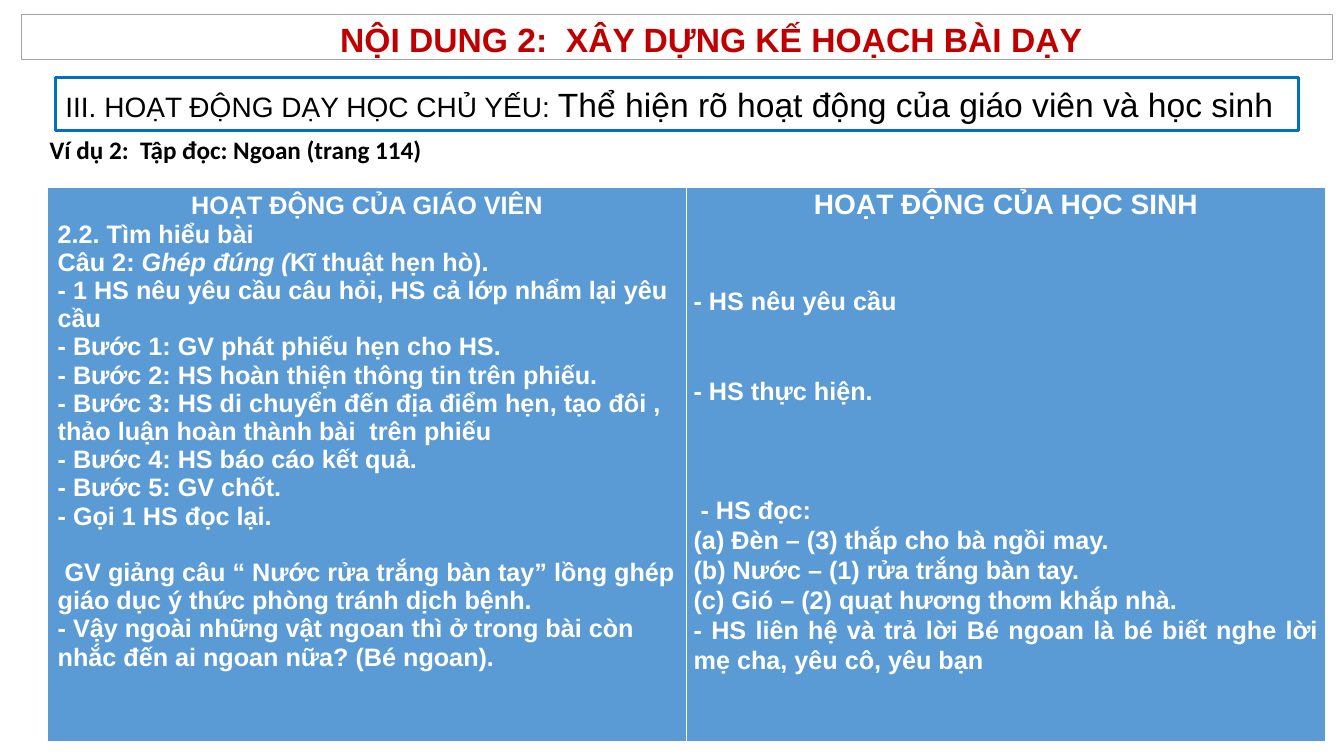
import pptx
import pptx.util
import pptx.dml.color
import pptx.enum.shapes
import pptx.enum.text

Cm, Pt = pptx.util.Cm, pptx.util.Pt
ALIGN = pptx.enum.text.PP_ALIGN
ANCHOR = pptx.enum.text.MSO_ANCHOR
COLORS = {"white": "FFFFFF", "black": "000000", "red": "C00000",
          "grey": "A5A5A5", "frame": "0070C0", "table": "5B9BD5"}
WORD_SPACE = Pt(5)

TEACHER_STEPS = [
    "2.2. Tìm hiểu bài",
    [("Câu 2: ", False), ("Ghép đúng (", True), ("Kĩ thuật hẹn hò).", False)],
    "- 1 HS nêu yêu cầu câu hỏi, HS cả lớp nhẩm lại yêu cầu",
    "- Bước 1: GV phát phiếu hẹn cho HS.",
    "- Bước 2: HS hoàn thiện thông tin trên phiếu.",
    "- Bước 3: HS di chuyển đến địa điểm hẹn, tạo đôi , thảo luận hoàn thành bài  trên phiếu",
    "- Bước 4: HS báo cáo kết quả.",
    "- Bước 5: GV chốt.",
    "- Gọi 1 HS đọc lại.",
    "GV giảng câu “ Nước rửa trắng bàn tay” lồng ghép giáo dục ý thức phòng tránh dịch bệnh.",
    "- Vậy ngoài những vật ngoan thì ở trong bài còn nhắc đến ai ngoan nữa? (Bé ngoan).",
]
STUDENT_STEPS = [
    "- HS nêu yêu cầu",
    "- HS thực hiện.",
    "- HS đọc:",
    "(a) Đèn – (3) thắp cho bà ngồi may.",
    "(b) Nước – (1) rửa trắng bàn tay.",
    "(c) Gió – (2) quạt hương thơm khắp nhà.",
    "- HS liên hệ và trả lời Bé ngoan là bé biết nghe lời mẹ cha, yêu cô, yêu bạn",
]
# Space in points before a step, by its position in the column
TEACHER_GAPS = {9: 20}
STUDENT_GAPS = {0: 47, 1: 43, 2: 64}


def rgb(name):
    return pptx.dml.color.RGBColor.from_string(COLORS[name])


def place(shape, box):
    shape.left, shape.top, shape.width, shape.height = (Cm(length) for length in box)


def set_font(font, size, color, name="Arial", bold=None):
    font.name, font.size, font.bold = name, Pt(size), bold
    font.color.rgb = rgb(color)


def set_indent(paragraph, first_line, left=0):
    properties = paragraph._p.get_or_add_pPr()
    properties.set("marL", str(left))
    properties.set("indent", str(first_line))


def frame_shape(shape, line_color, line_width):
    shape.fill.solid()
    shape.fill.fore_color.rgb = rgb("white")
    shape.line.color.rgb = rgb(line_color)
    shape.line.width = Pt(line_width)


def add_title(slide, box):
    title = slide.shapes.title
    place(title, box)
    frame_shape(title, "grey", 0.5)
    frame = title.text_frame
    frame.auto_size = pptx.enum.text.MSO_AUTO_SIZE.NONE
    frame.vertical_anchor = ANCHOR.TOP
    frame.text = "NỘI DUNG 2:  XÂY DỰNG KẾ HOẠCH BÀI DẠY"
    paragraph = frame.paragraphs[0]
    paragraph.alignment = ALIGN.CENTER
    set_indent(paragraph, Cm(1.27), Cm(0.46))
    set_font(paragraph.font, 24, "red", bold=True)


def add_section_heading(slide, box):
    shape = slide.shapes.add_shape(pptx.enum.shapes.MSO_SHAPE.RECTANGLE,
                                   *(Cm(length) for length in box))
    shape.shadow.inherit = False
    frame_shape(shape, "frame", 2.25)
    shape.text_frame.vertical_anchor = ANCHOR.MIDDLE
    paragraph = shape.text_frame.paragraphs[0]
    paragraph.alignment = ALIGN.JUSTIFY
    for text, size in (("III. HOẠT ĐỘNG DẠY HỌC CHỦ YẾU: ", 20),
                       ("Thể hiện rõ hoạt động của giáo viên và học sinh", 24)):
        run = paragraph.add_run()
        run.text = text
        set_font(run.font, size, "black")


def add_example_label(slide, box):
    label = slide.shapes.add_textbox(*(Cm(length) for length in box))
    label.text_frame.word_wrap = True
    label.text_frame.text = "Ví dụ 2:  Tập đọc: Ngoan (trang 114)"
    set_font(label.text_frame.paragraphs[0].font, 18, "black", "Calibri", True)


def fill_column(cell, heading, heading_size, steps, gaps, alignment, line_spacing, indented):
    """Write a heading and its steps; indented is the step that starts one space in."""
    cell.fill.solid()
    cell.fill.fore_color.rgb = rgb("table")
    frame = cell.text_frame
    for position, step in enumerate([heading] + steps, start=-1):
        is_heading = position < 0
        paragraph = frame.paragraphs[0] if is_heading else frame.add_paragraph()
        paragraph.alignment = ALIGN.CENTER if is_heading else alignment
        paragraph.line_spacing = line_spacing
        if position in gaps:
            paragraph.space_before = Pt(gaps[position])
        if position == indented:
            set_indent(paragraph, WORD_SPACE)
        parts = [(step, False)] if isinstance(step, str) else step
        for text, italic in parts:
            run = paragraph.add_run()
            run.text = text
            if italic:
                run.font.italic = True
        set_font(paragraph.font, heading_size if is_heading else 18, "white", bold=True)


def add_activity_table(slide, box):
    graphic = slide.shapes.add_table(1, 2, *(Cm(length) for length in box))
    teacher, student = graphic.table.rows[0].cells
    fill_column(teacher, "HOẠT ĐỘNG CỦA GIÁO VIÊN", 18, TEACHER_STEPS,
                TEACHER_GAPS, ALIGN.LEFT, 1.0, 9)
    student.margin_left = student.margin_right = Cm(0.18)
    student.margin_top = student.margin_bottom = 0
    fill_column(student, "HOẠT ĐỘNG CỦA HỌC SINH", 20, STUDENT_STEPS,
                STUDENT_GAPS, ALIGN.JUSTIFY, 1.06, 2)


def main():
    presentation = pptx.Presentation()
    presentation.slide_width, presentation.slide_height = Cm(33.87), Cm(19.05)
    slide = presentation.slides.add_slide(presentation.slide_layouts[5])
    add_section_heading(slide, (1.4, 1.96, 31.32, 1.32))
    add_title(slide, (0.55, 0.36, 33.02, 1.13))
    add_example_label(slide, (1, 3.26, 32.6, 1.03))
    add_activity_table(slide, (1.2, 4.71, 32.2, 13.97))
    presentation.save("out.pptx")


if __name__ == "__main__":
    main()
